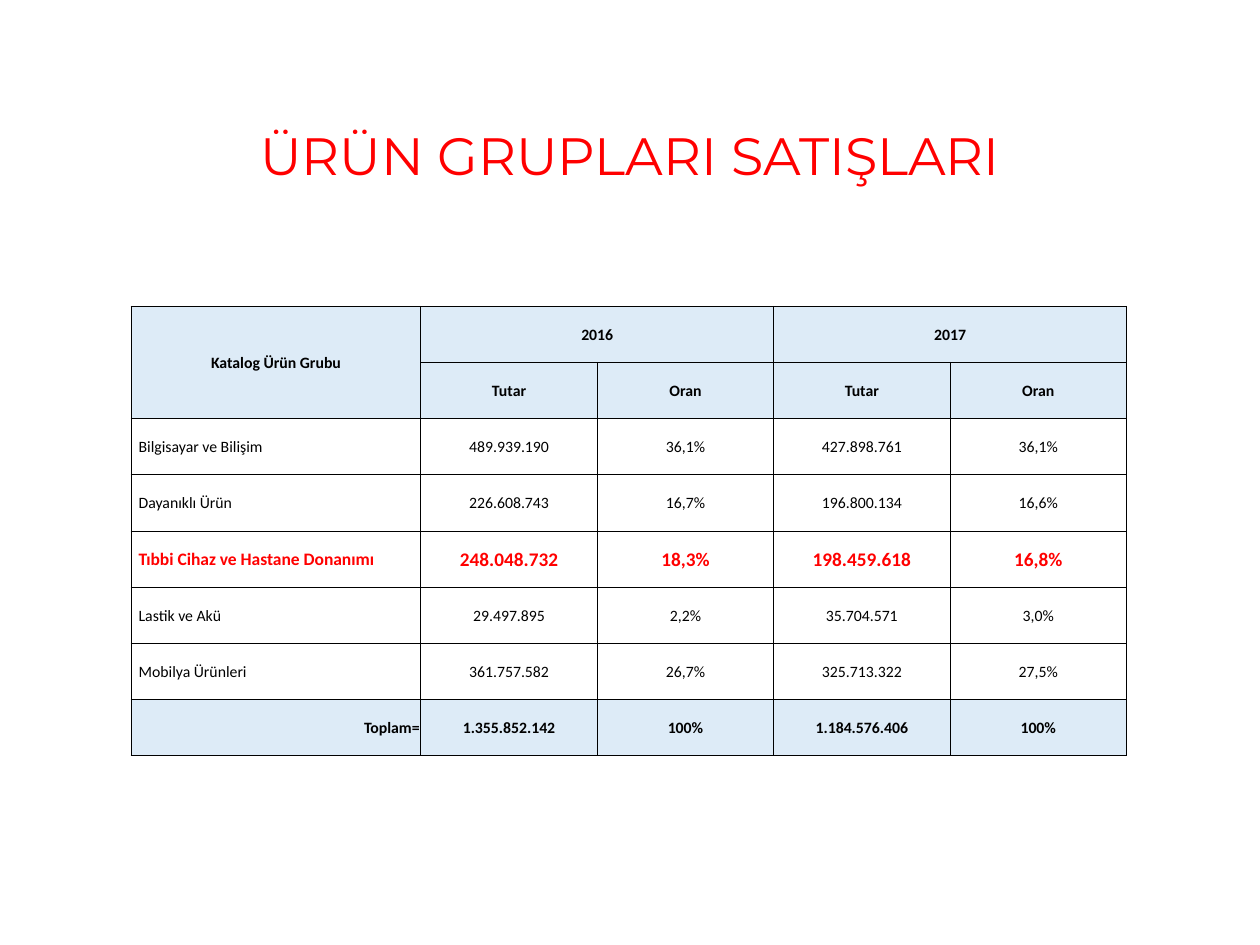
from lxml import etree
from pptx import Presentation
from pptx.dml.color import RGBColor
from pptx.enum import text
from pptx.oxml import ns
from pptx.util import Inches, Pt

RED = RGBColor(0xFF, 0x00, 0x00)
BLACK = RGBColor(0x00, 0x00, 0x00)
PALE_BLUE = RGBColor(0xDD, 0xEB, 0xF7)

LEFT, CENTER, RIGHT = text.PP_ALIGN.LEFT, text.PP_ALIGN.CENTER, text.PP_ALIGN.RIGHT
COLUMN_WIDTHS = [2.3, 1.4, 1.4, 1.4, 1.4]
TABLE_HEIGHT = 3.57
HEADER_ROWS = 2
HIGHLIGHT_ROW = 4
SALES = [
    ["Katalog Ürün Grubu", "2016", "", "2017", ""],
    ["", "Tutar", "Oran", "Tutar", "Oran"],
    ["Bilgisayar ve Bilişim", "489.939.190", "36,1%", "427.898.761", "36,1%"],
    ["Dayanıklı Ürün", "226.608.743", "16,7%", "196.800.134", "16,6%"],
    ["Tıbbi Cihaz ve Hastane Donanımı", "248.048.732", "18,3%", "198.459.618", "16,8%"],
    ["Lastik ve Akü", "29.497.895", "2,2%", "35.704.571", "3,0%"],
    ["Mobilya Ürünleri", "361.757.582", "26,7%", "325.713.322", "27,5%"],
    ["Toplam=", "1.355.852.142", "100%", "1.184.576.406", "100%"],
]
TOTAL_ROW = len(SALES) - 1


def format_text(para, font_name, size, color, bold, align):
    para.alignment = align
    for span in para.runs:
        span.font.name = font_name
        span.font.size = Pt(size)
        span.font.bold = bold
        span.font.color.rgb = color


def add_title(page, words):
    box = page.shapes.add_textbox(Inches(0.69), Inches(0.53), Inches(8.62), Inches(1.45))
    frame = box.text_frame
    frame.word_wrap = True
    frame.vertical_anchor = text.MSO_ANCHOR.MIDDLE
    frame.text = words
    para = frame.paragraphs[0]
    para.line_spacing = 0.9
    format_text(para, "Montserrat", 30, RED, False, CENTER)


def add_borders(cell):
    properties = cell._tc.get_or_add_tcPr()
    for side in ("a:lnL", "a:lnR", "a:lnT", "a:lnB"):
        line = etree.SubElement(properties, ns.qn(side), w=str(Pt(0.5)))
        fill = etree.SubElement(line, ns.qn("a:solidFill"))
        etree.SubElement(fill, ns.qn("a:srgbClr"), val=str(BLACK))


def format_cell(cell, row, column):
    shaded = row < HEADER_ROWS or row == TOTAL_ROW
    highlighted = row == HIGHLIGHT_ROW
    is_name = column == 0 and not shaded

    add_borders(cell)
    if shaded:
        cell.fill.solid()
        cell.fill.fore_color.rgb = PALE_BLUE
    else:
        cell.fill.background()

    cell.vertical_anchor = text.MSO_ANCHOR.MIDDLE
    cell.margin_left = Inches(0.06 if is_name else 0.01)
    cell.margin_right = cell.margin_top = Inches(0.01)
    cell.margin_bottom = 0

    align = CENTER
    if is_name:
        align = LEFT
    elif column == 0 and row == TOTAL_ROW:
        align = RIGHT
    size = 9
    if highlighted:
        size = 10 if is_name else 11
    format_text(cell.text_frame.paragraphs[0], "Calibri", size,
                RED if highlighted else BLACK, shaded or highlighted, align)


def add_sales_table(page):
    frame = page.shapes.add_table(
        len(SALES), len(COLUMN_WIDTHS), Inches(1.04), Inches(2.43),
        Inches(sum(COLUMN_WIDTHS)), Inches(TABLE_HEIGHT))
    table = frame.table
    table.first_row = False
    table.horz_banding = False
    for column, width in zip(table.columns, COLUMN_WIDTHS):
        column.width = Inches(width)
    for row, values in enumerate(SALES):
        for column, value in enumerate(values):
            cell = table.cell(row, column)
            if value:
                cell.text = value
            format_cell(cell, row, column)
    table.cell(0, 0).merge(table.cell(1, 0))
    for first in (1, 3):
        table.cell(0, first).merge(table.cell(0, first + 1))


def main():
    deck = Presentation()
    deck.slide_width, deck.slide_height = Inches(10), Inches(7.5)
    page = deck.slides.add_slide(deck.slide_layouts[6])
    add_title(page, "ÜRÜN GRUPLARI SATIŞLARI")
    add_sales_table(page)
    deck.save("out.pptx")


if __name__ == "__main__":
    main()
